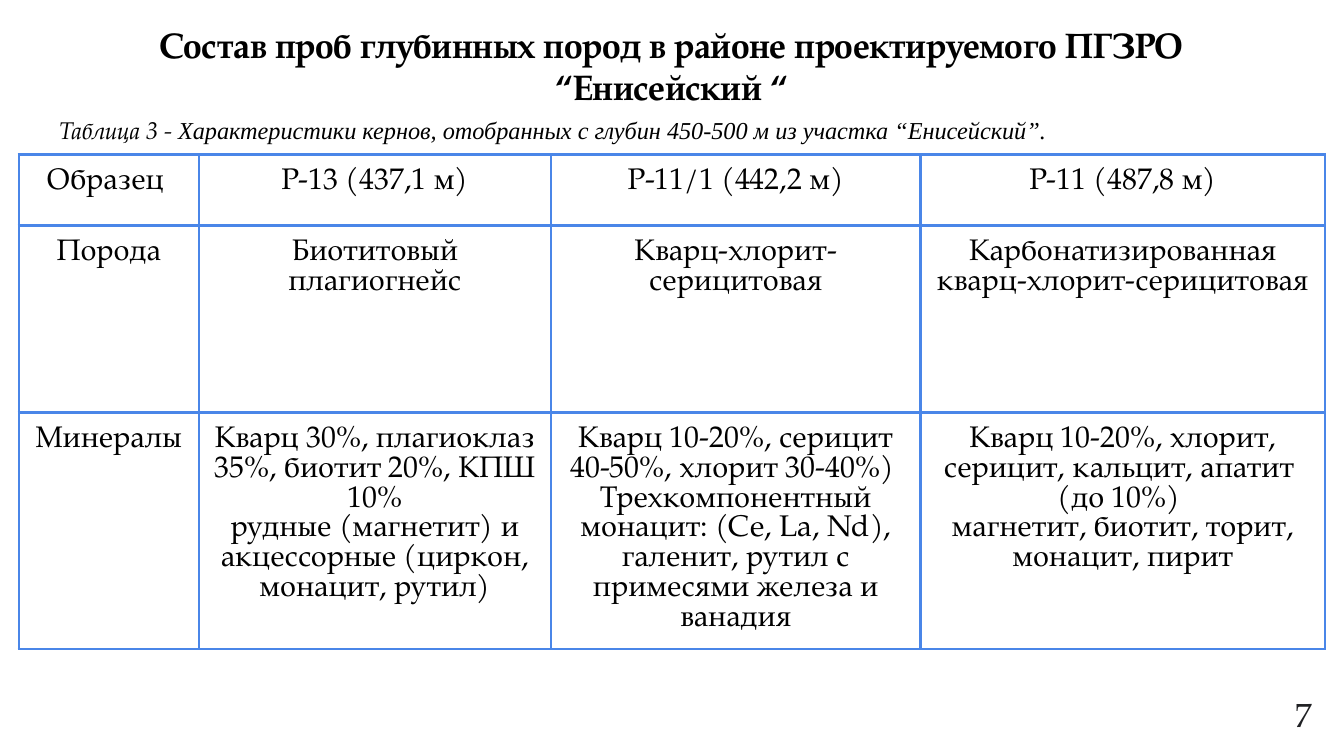
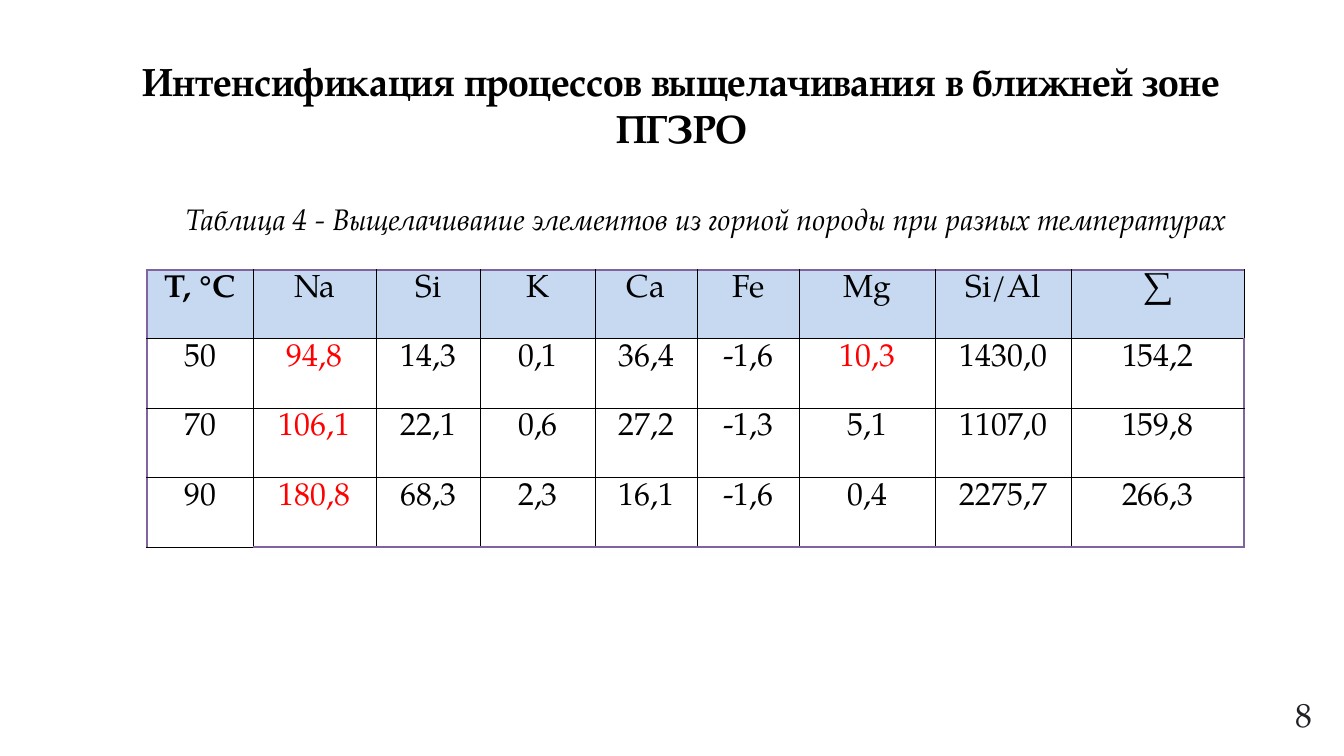
from dataclasses import dataclass

from lxml import etree
from pptx import Presentation
from pptx.dml.color import RGBColor
from pptx.enum.text import MSO_ANCHOR, PP_ALIGN
from pptx.oxml.ns import qn
from pptx.util import Inches, Length, Pt

LEFT, CENTER, RIGHT = PP_ALIGN.LEFT, PP_ALIGN.CENTER, PP_ALIGN.RIGHT
TOP, MIDDLE = MSO_ANCHOR.TOP, MSO_ANCHOR.MIDDLE

WIDTH = Inches(10)
HEIGHT = Length(WIDTH * 9 // 16)
SERIF, ROMAN = "TeX Gyre Pagella", "Times New Roman"
BLACK, WHITE, RED, GRAY = "000000", "FFFFFF", "FF0000", "202124"
BLUE, VIOLET, PALE_BLUE = "4A86E8", "8064A2", "C6D9F1"


@dataclass(frozen=True)
class Frame:
    """A place on a grid of 100 columns by 100 rows."""
    column: float
    row: float
    columns: float
    rows: float


@dataclass(frozen=True)
class Span:
    """A stretch of text in one style."""
    text: str
    size: float
    font: str = SERIF
    color: str = BLACK
    bold: bool = False
    italic: bool = False


@dataclass(frozen=True)
class Caption:
    """A box holding one paragraph."""
    frame: Frame
    spans: tuple[Span, ...]
    align: int = LEFT
    anchor: int = TOP
    spacing: float = 1.0
    indent: float = 1.0


@dataclass(frozen=True)
class Edge:
    """The colour and weight of a cell border."""
    color: str
    weight: float


@dataclass(frozen=True)
class Grid:
    """A table with its measures and its style."""
    column: float
    row: float
    widths: tuple[float, ...]
    heights: tuple[float, ...]
    cells: tuple[tuple[str, ...], ...]
    size: float
    paragraph: dict
    margins: dict
    inner: Edge
    outer: Edge
    header_fill: str = WHITE
    red: frozenset = frozenset()
    bold: frozenset = frozenset()
    plain_edges: frozenset = frozenset()


def across(columns: float) -> Length:
    """Turn grid columns into a length."""
    return Length(round(WIDTH * columns / 100))


def down(rows: float) -> Length:
    """Turn grid rows into a length."""
    return Length(round(HEIGHT * rows / 100))


def paint(color_format, color: str) -> None:
    """Give a colour format a hex colour."""
    color_format.rgb = RGBColor.from_string(color)


def apply(target, values: dict) -> None:
    """Set each named attribute of the target."""
    for name, value in values.items():
        setattr(target, name, value)


def write(para, span: Span) -> None:
    """Add a styled span to a paragraph."""
    run = para.add_run()
    run.text = span.text
    apply(run.font, {"name": span.font, "size": Pt(span.size),
                     "bold": span.bold, "italic": span.italic})
    paint(run.font.color, span.color)


def draw_caption(page, caption: Caption) -> None:
    """Draw a caption on the page."""
    place = caption.frame
    box = page.shapes.add_textbox(across(place.column), down(place.row),
                                  across(place.columns), down(place.rows))
    apply(box.text_frame, {"word_wrap": True, "vertical_anchor": caption.anchor,
                           "margin_left": across(caption.indent), "margin_right": across(1),
                           "margin_top": across(1), "margin_bottom": across(1)})
    para = box.text_frame.paragraphs[0]
    apply(para, {"alignment": caption.align, "line_spacing": caption.spacing})
    for span in caption.spans:
        write(para, span)


def draw_edge(cell, side: str, edge: Edge) -> None:
    """Add a border to one side of a cell."""
    properties = cell._tc.get_or_add_tcPr()
    line = etree.SubElement(properties, qn(f"a:ln{side}"), w=str(Pt(edge.weight)))
    fill = etree.SubElement(line, qn("a:solidFill"))
    etree.SubElement(fill, qn("a:srgbClr"), val=edge.color)


def draw_cell(cell, grid: Grid, row: int, column: int) -> None:
    """Fill, border and write one cell."""
    spot = (row, column)
    on_rim = {"L": column == 0, "R": column == len(grid.widths) - 1,
              "T": row == 0, "B": row == len(grid.heights) - 1}
    for side, rim in on_rim.items():
        plain = (*spot, side) in grid.plain_edges
        draw_edge(cell, side, grid.outer if rim and not plain else grid.inner)
    cell.fill.solid()
    paint(cell.fill.fore_color, grid.header_fill if row == 0 else WHITE)
    apply(cell, grid.margins)
    for number, text in enumerate(grid.cells[row][column].split("\n")):
        frame = cell.text_frame
        para = frame.add_paragraph() if number else frame.paragraphs[0]
        apply(para, {"alignment": CENTER, **grid.paragraph})
        write(para, Span(text, grid.size, color=RED if spot in grid.red else BLACK,
                         bold=spot in grid.bold))


def draw_grid(page, grid: Grid) -> None:
    """Draw a table on the page."""
    table = page.shapes.add_table(
        len(grid.heights), len(grid.widths), across(grid.column), down(grid.row),
        across(sum(grid.widths)), down(sum(grid.heights))).table
    apply(table, {"first_row": False, "horz_banding": False})
    for column, width in zip(table.columns, grid.widths):
        column.width = across(width)
    for row, height in zip(table.rows, grid.heights):
        row.height = down(height)
    for row in range(len(grid.heights)):
        for column in range(len(grid.widths)):
            draw_cell(table.cell(row, column), grid, row, column)


def title(frame: Frame, text: str, size: float) -> Caption:
    """Describe a slide title."""
    return Caption(frame, (Span(text, size, bold=True),), CENTER)


def page_number(number: int) -> Caption:
    """Describe the number in the lower right corner."""
    return Caption(Frame(92.65, 90.67, 6, 7.64), (Span(str(number), 18, color=GRAY),),
                   RIGHT, MIDDLE)


SAMPLES = Grid(
    1.4, 20.44, (13.4, 26.2, 27.5, 30.1), (9.42, 24.71, 31.29),
    (("Образец ", "Р-13 (437,1 м)", "Р-11/1 (442,2 м)", "Р-11 (487,8 м)"),
     ("Порода", "Биотитовый плагиогнейс", "Кварц-хлорит- серицитовая",
      "Карбонатизированная кварц-хлорит-серицитовая"),
     ("Минералы",
      "Кварц 30%, плагиоклаз 35%, биотит 20%, КПШ 10%\n"
      "рудные (магнетит) и акцессорные (циркон, монацит, рутил)",
      "Кварц 10-20%, серицит 40-50%, хлорит 30-40%) \n"
      "Трехкомпонентный монацит: (Ce, La, Nd), галенит, рутил с примесями железа и ванадия",
      "Кварц 10-20%, хлорит, серицит, кальцит, апатит \n(до 10%) \n"
      "магнетит, биотит, торит, монацит, пирит")),
    size=16,
    paragraph={"line_spacing": Pt(16)},
    margins={f"margin_{side}": across(1) for side in ("left", "right", "top", "bottom")},
    inner=Edge(BLUE, 1.5), outer=Edge(BLUE, 1.5))

LEACHING = Grid(
    10.92, 35.73, (7.93, 9.13, 7.8, 8.5, 7.6, 7.6, 10.15, 10.1, 12.85),
    (9.07, 9.2, 9.2, 9.2),
    (("T, °C", "Na", "Si", "K", "Ca", "Fe", "Mg", "Si/Al", "∑"),
     ("50", "94,8", "14,3", "0,1", "36,4", "-1,6", "10,3", "1430,0", "154,2"),
     ("70", "106,1", "22,1", "0,6", "27,2", "-1,3", "5,1", "1107,0", "159,8"),
     ("90", "180,8", "68,3", "2,3", "16,1", "-1,6", "0,4", "2275,7", "266,3")),
    size=17,
    paragraph={"line_spacing": 1.15, "space_before": Pt(10)},
    margins={"margin_left": across(0.8), "margin_right": across(0.8),
             "margin_top": 0, "margin_bottom": 0},
    inner=Edge(BLACK, 0.5), outer=Edge(VIOLET, 1), header_fill=PALE_BLUE,
    red=frozenset({(1, 1), (2, 1), (3, 1), (1, 6)}), bold=frozenset({(0, 0)}),
    plain_edges=frozenset({(0, 8, "R"), (3, 0, "B")}))

SLIDES = (
    (SAMPLES,
     title(Frame(3.4, 1.25, 93.2, 11.2),
           "Состав проб глубинных пород в районе проектируемого ПГЗРО “Енисейский “", 18.9),
     Caption(Frame(3.4, 12.9, 93.2, 6.93),
             (Span("Таблица 3 - ", 13, italic=True),
              Span("Характеристики кернов, отобранных с глубин 450-500 м "
                   "из участка “Енисейский”.", 13, ROMAN, italic=True)), spacing=1.15)),
    (LEACHING,
     title(Frame(6.8, 5.75, 87.8, 11.2),
           "Интенсификация процессов выщелачивания в ближней зоне ПГЗРО", 21),
     Caption(Frame(12.2, 25.07, 83.4, 7.11),
             (Span("Таблица 4 - Выщелачивание элементов из горной породы "
                   "при разных температурах", 16, italic=True),),
             anchor=MIDDLE, spacing=1.15, indent=1.6)),
)


def main() -> None:
    """Build the deck and save it."""
    deck = Presentation()
    apply(deck, {"slide_width": WIDTH, "slide_height": HEIGHT})
    for number, (grid, heading, caption) in enumerate(SLIDES, start=7):
        page = deck.slides.add_slide(deck.slide_layouts[6])
        draw_caption(page, heading)
        draw_grid(page, grid)
        draw_caption(page, caption)
        draw_caption(page, page_number(number))
    deck.save("out.pptx")


if __name__ == "__main__":
    main()
